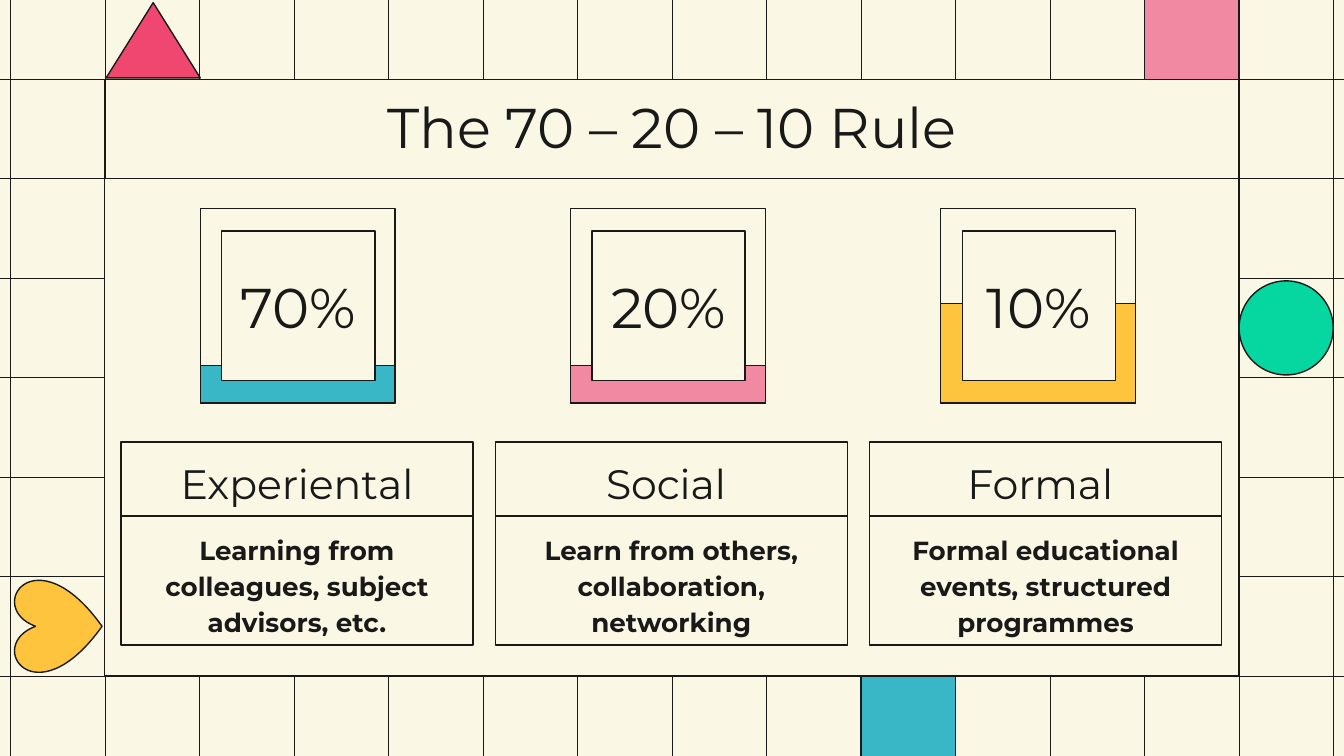
import pptx
import pptx.util
import pptx.dml.color
import pptx.enum.shapes
import pptx.enum.text
import pptx.oxml

Inches, Pt = pptx.util.Inches, pptx.util.Pt
RGBColor = pptx.dml.color.RGBColor
SHAPE = pptx.enum.shapes.MSO_SHAPE
ANCHOR = pptx.enum.text.MSO_ANCHOR

CREAM = RGBColor(0xFA, 0xF8, 0xE4)
INK = RGBColor(0x19, 0x19, 0x19)
PINK = RGBColor(0xF2, 0x89, 0xA3)
BLUE = RGBColor(0x39, 0xB7, 0xC7)
RED = RGBColor(0xEF, 0x47, 0x6F)
GREEN = RGBColor(0x06, 0xD6, 0xA0)
YELLOW = RGBColor(0xFF, 0xC4, 0x3D)

FONT = "Montserrat"
WIDTH = 10
HEIGHT = WIDTH * 9 / 16
PANEL = (0.78, 0.59, 8.44, 4.44)

# Percentage, fill level in inches, colour, heading, description
COLUMNS = [
    ("70%", 0.28, BLUE, "Experiental",
     "Learning from colleagues, subject advisors, etc."),
    ("20%", 0.28, PINK, "Social ",
     "Learn from others, collaboration, networking"),
    ("10%", 0.74, YELLOW, "Formal ",
     "Formal educational events, structured programmes"),
]


def paint(shape, color):
    shape.fill.solid()
    shape.fill.fore_color.rgb = color
    shape.line.color.rgb = INK
    shape.line.width = Pt(0.75)


def add_block(slide, kind, box, color=CREAM):
    shape = slide.shapes.add_shape(kind, *map(Inches, box))
    shape.shadow.inherit = False
    paint(shape, color)
    return shape


def write(shape, text, size, anchor=ANCHOR.MIDDLE, bold=False, spacing=1.0):
    frame = shape.text_frame
    frame.text = text
    frame.word_wrap = True
    frame.auto_size = pptx.enum.text.MSO_AUTO_SIZE.NONE
    frame.vertical_anchor = anchor
    frame.margin_left = frame.margin_right = Inches(0.1)
    frame.margin_top = frame.margin_bottom = Inches(0.1)
    paragraph = frame.paragraphs[0]
    paragraph.alignment = pptx.enum.text.PP_ALIGN.CENTER
    paragraph.line_spacing = spacing
    paragraph.font.name = FONT
    paragraph.font.size = Pt(size)
    paragraph.font.bold = bold
    paragraph.font.color.rgb = INK


def add_grid_line(slide, *ends):
    line = slide.shapes.add_connector(
        pptx.enum.shapes.MSO_CONNECTOR.STRAIGHT, *map(Inches, ends))
    line.line.color.rgb = INK
    line.line.width = Pt(0.25)
    line.element.spPr.append(pptx.oxml.parse_xml(
        '<a:effectLst xmlns:a='
        '"http://schemas.openxmlformats.org/drawingml/2006/main"/>'))


def add_background(slide, panel):
    slide.background.fill.solid()
    slide.background.fill.fore_color.rgb = CREAM
    left, top, width, height = panel
    row, column = height / 6, width / 12

    # Grid, aligned with the panel's edges
    for index in range(7):
        y = top + index * row
        add_grid_line(slide, 0, y, WIDTH, y)
    for index in range(-1, 14):
        x = left + index * column
        add_grid_line(slide, x, 0, x, HEIGHT)

    # Panel and the ornaments around it
    right, bottom = left + width, top + height
    add_block(slide, SHAPE.RECTANGLE, panel)
    add_block(slide, SHAPE.RECTANGLE,
              (right - column, top - row, column, row), PINK)
    add_block(slide, SHAPE.RECTANGLE,
              (left + 8 * column, bottom, column, row), BLUE)
    add_block(slide, SHAPE.ISOSCELES_TRIANGLE,
              (left + 0.01, 0.02, 0.7, 0.56), RED)
    add_block(slide, SHAPE.OVAL, (right, 2.09, 0.7, 0.7), GREEN)
    heart = add_block(slide, SHAPE.HEART, (0.09, 4.33, 0.68, 0.66), YELLOW)
    heart.rotation = 270


def add_title(slide, box, text):
    title = slide.shapes.title
    title.left, title.top, title.width, title.height = map(Inches, box)
    paint(title, CREAM)
    write(title, text, 30, ANCHOR.TOP)
    # Bring the title in front of the panel
    title.element.getparent().append(title.element)


def add_gauge(slide, box, percentage, level, color):
    left, top, width, height = box
    add_block(slide, SHAPE.RECTANGLE, box)
    add_block(slide, SHAPE.RECTANGLE,
              (left, top + height - level, width, level), color)
    center = add_block(slide, SHAPE.RECTANGLE,
                       (left + 0.16, top + 0.17, 1.14, 1.11))
    write(center, percentage, 30)


def add_card(slide, box, heading, description):
    left, top, width, height = box
    heading_height = 0.55
    body = add_block(slide, SHAPE.RECTANGLE,
                     (left, top + heading_height, width,
                      height - heading_height))
    write(body, description, 14, ANCHOR.TOP, bold=True, spacing=1.15)
    header = add_block(slide, SHAPE.RECTANGLE,
                       (left, top, width, heading_height))
    write(header, heading, 22, spacing=1.15)


def main():
    presentation = pptx.Presentation()
    presentation.slide_width = Inches(WIDTH)
    presentation.slide_height = Inches(HEIGHT)
    slide = presentation.slides.add_slide(presentation.slide_layouts[5])

    add_background(slide, PANEL)
    add_title(slide, (*PANEL[:3], 0.74), "The 70 – 20 – 10 Rule")
    gauge_step, card_step = 5.51 / 2, 5.57 / 2
    for index, column in enumerate(COLUMNS):
        percentage, level, color, heading, description = column
        add_gauge(slide, (1.49 + index * gauge_step, 1.55, 1.45, 1.45),
                  percentage, level, color)
        add_card(slide, (0.9 + index * card_step, 3.29, 2.62, 1.51),
                 heading, description)

    presentation.save("out.pptx")


if __name__ == "__main__":
    main()
